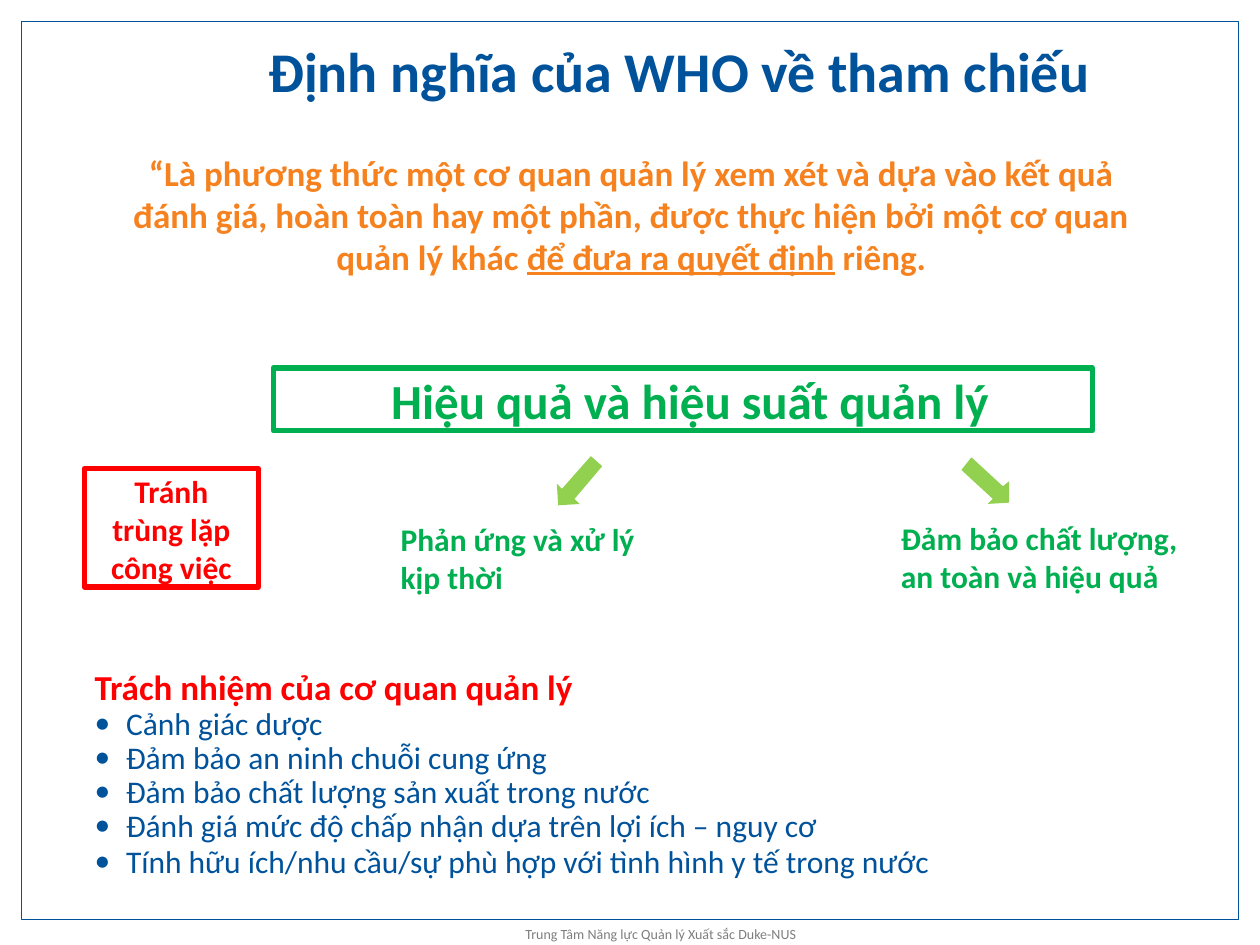
import pptx
import pptx.util
import pptx.dml.color
import pptx.enum.shapes
import pptx.enum.text
import lxml.etree
from pptx.util import Inches, Pt

THEME = {
    "font": "Calibri",
    "blue": "00529B", "orange": "F5821F", "green": "00AF50",
    "red": "FF0000", "lime": "92D050", "gray": "7E7E7E",
    "title": 32, "banner": 28, "lead": 20, "body": 18, "footer": 8,
}
LEFT, CENTER = pptx.enum.text.PP_ALIGN.LEFT, pptx.enum.text.PP_ALIGN.CENTER

FRAME = (0.17, 0.17, 9.66, 7.13)

QUOTE = [
    ("“Là phương thức một cơ quan quản lý xem xét và dựa vào kết quả đánh giá, "
     "hoàn toàn hay một phần, được thực hiện bởi một cơ quan quản lý khác ", False),
    ("để đưa ra quyết định", True),
    (" riêng.", False),
]

# position, (left, top, right) inset, runs, size, colour, alignment, outlined
BOXES = [
    ((0.87, 0.18, 8.27, 0.65), (1.26, 0.11, 0), [("Định nghĩa của WHO về tham chiếu", False)],
     "title", "blue", LEFT, False),
    ((0.8, 1.19, 8.28, 1.02), (0.14, 0.01, 0), QUOTE, "lead", "orange", CENTER, False),
    ((2.17, 2.92, 6.5, 0.5), (0.11, 0.02, 0), [("Hiệu quả và hiệu suất quản lý", False)],
     "banner", "green", CENTER, True),
    ((3.17, 4.12, 2.16, 0.63), (0.01, 0.01, 0), [("Phản ứng và xử lý kịp thời", False)],
     "body", "green", LEFT, False),
    ((7.14, 4.11, 2.22, 0.63), (0.01, 0.01, 0),
     [("Đảm bảo chất lượng, an toàn và hiệu quả", False)], "body", "green", LEFT, False),
    ((0.67, 3.72, 1.38, 0.94), (0.1, 0.03, 0.1), [("Tránh trùng lặp công việc", False)],
     "body", "red", CENTER, True),
]

ARROWS = [
    [(4.69, 3.62), (4.46, 3.88), (4.42, 3.84), (4.43, 4.01), (4.6, 4), (4.56, 3.96), (4.78, 3.7)],
    [(7.71, 3.63), (7.63, 3.73), (7.88, 3.96), (7.84, 4), (8.01, 3.99), (8.01, 3.82), (7.96, 3.86)],
]

DUTIES_AT = (0.64, 5.25, 7.55, 1.78)
DUTIES_HEADING = "Trách nhiệm của cơ quan quản lý"
DUTIES = [
    "Cảnh giác dược",
    "Đảm bảo an ninh chuỗi cung ứng",
    "Đảm bảo chất lượng sản xuất trong nước",
    "Đánh giá mức độ chấp nhận dựa trên lợi ích – nguy cơ",
    "Tính hữu ích/nhu cầu/sự phù hợp với tình hình y tế trong nước",
]

FOOTER_AT = (4.16, 7.36, 2.43, 0.13)
FOOTER = "Trung Tâm Năng lực Quản lý Xuất sắc Duke-NUS"


def rgb(color):
    return pptx.dml.color.RGBColor.from_string(THEME[color])


def style(font, size, color, bold=False):
    font.name, font.size, font.bold = THEME["font"], Pt(THEME[size]), bold
    font.color.rgb = rgb(color)


def add_outline(slide, at, color, width):
    sp = slide.shapes.add_shape(pptx.enum.shapes.MSO_SHAPE.RECTANGLE, *map(Inches, at))
    sp.shadow.inherit = False
    sp.fill.background()
    sp.line.color.rgb, sp.line.width = rgb(color), Pt(width)
    return sp


def prepare_text(sp, left, top, right=0, bottom=0):
    tf = sp.text_frame
    tf.word_wrap = True
    tf.vertical_anchor = pptx.enum.text.MSO_ANCHOR.TOP
    tf.margin_left, tf.margin_top = Inches(left), Inches(top)
    tf.margin_right, tf.margin_bottom = Inches(right), Inches(bottom)
    return tf


def add_bullet(p, indent=0.25):
    pPr = p._p.get_or_add_pPr()
    pPr.set("marL", str(Inches(indent)))
    pPr.set("indent", str(-Inches(indent)))
    for tag, key, value in (("a:buFont", "typeface", THEME["font"]), ("a:buChar", "char", "•")):
        lxml.etree.SubElement(pPr, pptx.oxml.ns.qn(tag)).set(key, value)


def add_box(slide, at, inset, runs, size, color, align, outlined):
    if outlined:
        sp = add_outline(slide, at, color, 3)
    else:
        sp = slide.shapes.add_textbox(*map(Inches, at))
    p = prepare_text(sp, *inset).paragraphs[0]
    p.alignment = align
    for text, underlined in runs:
        r = p.add_run()
        r.text = text
        style(r.font, size, color, bold=True)
        if underlined:
            r.font.underline = True


def add_arrow(slide, points):
    start, *rest = [(Inches(x), Inches(y)) for x, y in points]
    builder = slide.shapes.build_freeform(*start)
    builder.add_line_segments(rest, close=True)
    sp = builder.convert_to_shape()
    sp.shadow.inherit = False
    sp.fill.solid()
    sp.fill.fore_color.rgb = rgb("lime")
    sp.line.fill.background()


def add_duties(slide):
    tf = prepare_text(slide.shapes.add_textbox(*map(Inches, DUTIES_AT)), 0.11, 0.05, 0.1, 0.05)
    p = tf.paragraphs[0]
    p.text, p.line_spacing = DUTIES_HEADING, Pt(22.9)
    style(p.runs[0].font, "lead", "red", bold=True)
    for duty in DUTIES:
        p = tf.add_paragraph()
        p.text = duty
        p.line_spacing = Pt(20.5 if duty == DUTIES[-1] else 19.4)
        add_bullet(p)
        style(p.runs[0].font, "body", "blue")


def add_footer(slide):
    tf = prepare_text(slide.shapes.add_textbox(*map(Inches, FOOTER_AT)), 0.01, 0)
    p = tf.paragraphs[0]
    p.text, p.line_spacing = FOOTER, Pt(8.7)
    style(p.runs[0].font, "footer", "gray")


def main():
    prs = pptx.Presentation()
    prs.slide_width, prs.slide_height = Inches(10), Inches(7.5)
    slide = prs.slides.add_slide(prs.slide_layouts[6])
    add_outline(slide, FRAME, "blue", 0.75)
    for box in BOXES:
        add_box(slide, *box)
    for points in ARROWS:
        add_arrow(slide, points)
    add_duties(slide)
    add_footer(slide)
    prs.save("out.pptx")


if __name__ == "__main__":
    main()
